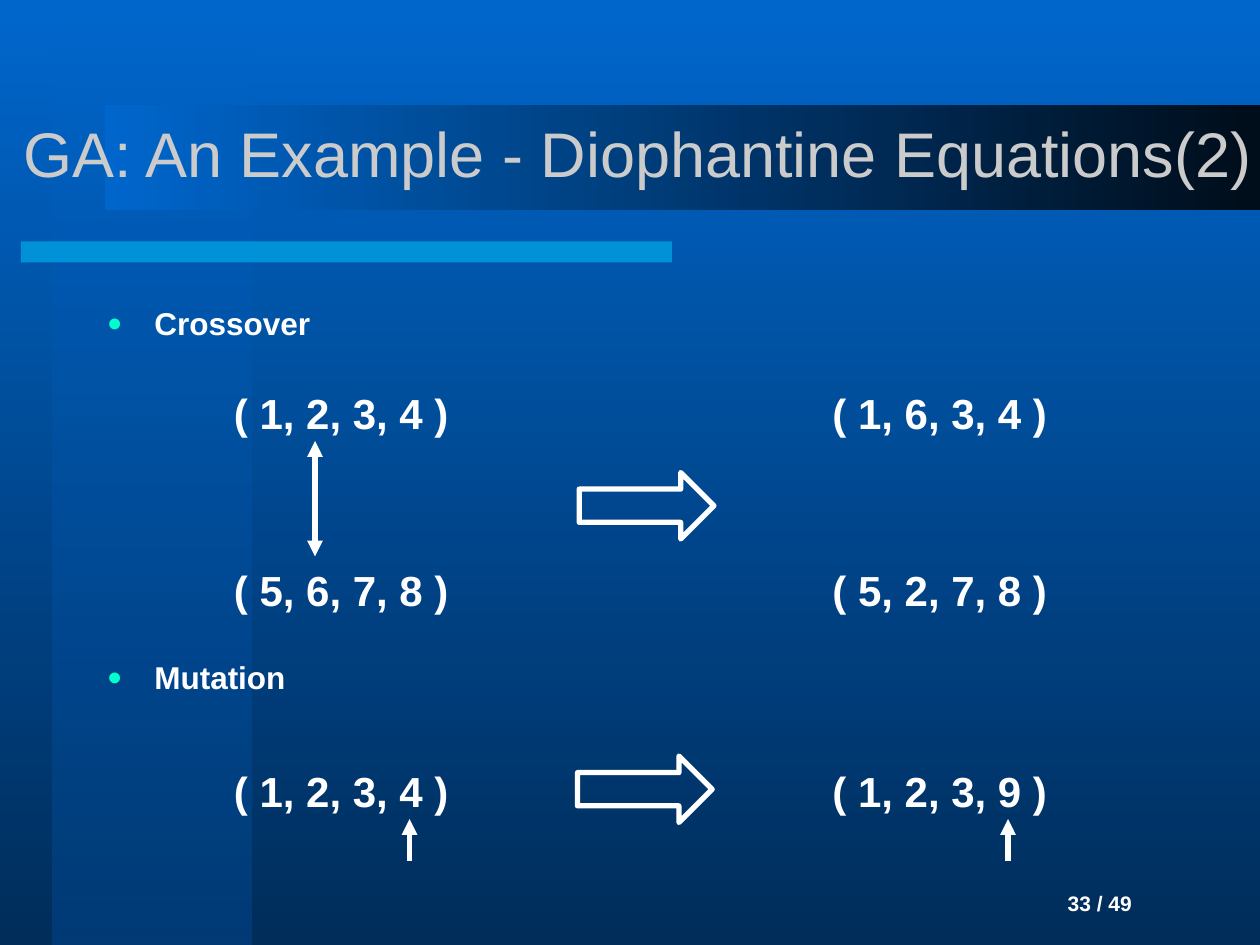
from lxml import etree
from pptx import Presentation
from pptx.dml.color import RGBColor
from pptx.enum.shapes import MSO_CONNECTOR, MSO_SHAPE
from pptx.enum.text import MSO_ANCHOR, MSO_AUTO_SIZE, PP_ALIGN
from pptx.oxml.ns import qn
from pptx.util import Pt

RECT, BLOCK = MSO_SHAPE.RECTANGLE, MSO_SHAPE.RIGHT_ARROW
LINE = MSO_CONNECTOR.STRAIGHT
LEFT, MID = PP_ALIGN.LEFT, PP_ALIGN.CENTER
TOP, HALF = MSO_ANCHOR.TOP, MSO_ANCHOR.MIDDLE
FIXED = MSO_AUTO_SIZE.NONE


def color(code):
    return RGBColor.from_string(code)


def child(node, tag, **attrs):
    return etree.SubElement(node, qn(tag), attrs)


def blend(fill, first, last, angle):
    fill.gradient()
    fill.gradient_angle = angle
    for stop, code in zip(fill.gradient_stops, (first, last)):
        stop.color.rgb = color(code)


def fade(shape, share):
    """Set the opacity of the first colour in a shape's fill."""
    node = next(shape._element.spPr.iter(qn("a:srgbClr")))
    child(node, "a:alpha", val=str(share * 1000))


def write(para, text, size=18, hue="FFFFFF", bold=True, align=LEFT, gap=0):
    para.text = text
    para.alignment = align
    para.space_before = Pt(gap)
    font = para.font
    font.name, font.size, font.bold = "Arial", Pt(size), bold
    font.color.rgb = color(hue)


class Deck:
    ink, dot, weight = "FFFFFF", "00FFCC", 3

    def __init__(self):
        self.show = Presentation()
        self.show.slide_width, self.show.slide_height = Pt(720), Pt(540)
        self.slide = self.show.slides.add_slide(self.show.slide_layouts[1])
        self.shapes = self.slide.shapes

    def ground(self, first, last):
        blend(self.slide.background.fill, first, last, 270)

    def shape(self, kind, x, y, w, h):
        item = self.shapes.add_shape(kind, Pt(x), Pt(y), Pt(w), Pt(h))
        item.shadow.inherit = False
        item.line.fill.background()
        return item

    def band(self, x, y, w, h, first, last, angle):
        item = self.shape(RECT, x, y, w, h)
        blend(item.fill, first, last, angle)
        return item

    def bar(self, x, y, w, h, hue):
        item = self.shape(RECT, x, y, w, h)
        item.fill.solid()
        item.fill.fore_color.rgb = color(hue)
        return item

    def block(self, x, y):
        item = self.shape(BLOCK, x, y, 77, 38)
        item.fill.background()
        self.stroke(item.line)

    def stroke(self, line):
        line.color.rgb = color(self.ink)
        line.width = Pt(self.weight)

    def arrow(self, x, start, end, both=False):
        item = self.shapes.add_connector(LINE, Pt(x), Pt(start), Pt(x), Pt(end))
        self.stroke(item.line)
        props = item._element.spPr
        line = props.find(qn("a:ln"))
        if both:
            child(line, "a:headEnd", type="triangle")
        child(line, "a:tailEnd", type="triangle")
        child(props, "a:effectLst")

    def label(self, text, x, y, w, h, anchor=TOP, **style):
        box = self.shapes.add_textbox(Pt(x), Pt(y), Pt(w), Pt(h))
        box.text_frame.vertical_anchor = anchor
        box.text_frame.word_wrap = False
        write(box.text_frame.paragraphs[0], text, **style)

    def place(self, item, x, y, w, h, anchor):
        item.left, item.top, item.width, item.height = Pt(x), Pt(y), Pt(w), Pt(h)
        frame = item.text_frame
        frame.auto_size, frame.vertical_anchor = FIXED, anchor
        frame.word_wrap = True
        # Bring the placeholder in front of the bands
        tree = item._element.getparent()
        tree.append(item._element)
        return frame

    def title(self, text):
        frame = self.place(self.shapes.title, 6, 42, 720, 90, HALF)
        write(frame.paragraphs[0], text, size=36, hue="CBCBCB", bold=False)

    def points(self, items):
        frame = self.place(self.slide.placeholders[1], 54, 170, 612, 322, TOP)
        for i, (text, gap) in enumerate(items):
            para = frame.add_paragraph() if i else frame.paragraphs[0]
            props = para._p.get_or_add_pPr()
            props.set("marL", str(Pt(27)))
            props.set("indent", str(Pt(-27)))
            tint = child(props, "a:buClr")
            child(tint, "a:srgbClr", val=self.dot)
            child(props, "a:buSzPct", val="80000")
            child(props, "a:buFont", typeface="Arial")
            child(props, "a:buChar", char="●")
            write(para, text, gap=gap)


def main():
    deck = Deck()

    # Background and bands
    deck.ground("0066CC", "002D5A")
    fade(deck.band(30, 0, 114, 540, "0066CC", "003B76", 270), 50)
    fade(deck.bar(12, 138, 372, 12, "00CCFF"), 50)
    deck.band(60, 60, 660, 60, "0066CC", "000D1A", 0)

    # Title, list and page number
    deck.title("GA: An Example - Diophantine Equations(2)")
    deck.points([("Crossover", 0), ("Mutation", 181)])
    deck.label("33 / 49", 603, 498, 147, 36, anchor=HALF, size=12)

    # Vectors before and after each step
    rows = [
        (218, "( 1, 2, 3, 4 )", "( 1, 6, 3, 4 )"),
        (319, "( 5, 6, 7, 8 )", "( 5, 2, 7, 8 )"),
        (434, "( 1, 2, 3, 4 )", "( 1, 2, 3, 9 )"),
    ]
    for y, *pair in rows:
        for x, text in zip((126.5, 468.5), pair):
            deck.label(text, x, y, 137, 35, size=24, align=MID)

    # Step arrows
    deck.block(331, 270)
    deck.block(330, 432)

    # Marks on the changed numbers
    deck.arrow(180, 252, 318, both=True)
    for x in (234, 576):
        deck.arrow(x, 492, 468)

    deck.show.save("out.pptx")


if __name__ == "__main__":
    main()
